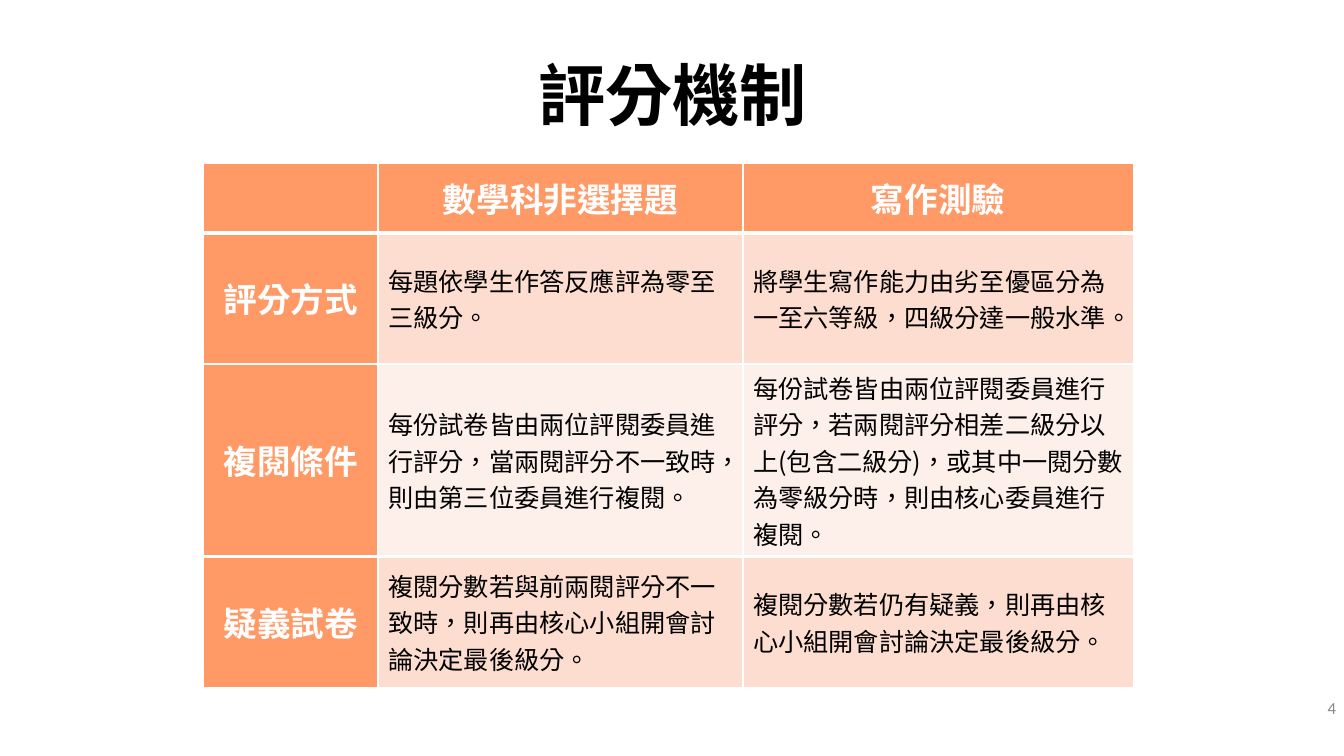
from lxml import etree
from pptx import Presentation
from pptx.dml.color import RGBColor
from pptx.enum.text import MSO_ANCHOR, PP_ALIGN
from pptx.oxml.ns import qn
from pptx.util import Inches, Pt

WHITE = RGBColor(0xFF, 0xFF, 0xFF)
BLACK = RGBColor(0, 0, 0)
GRAY = RGBColor(0x89, 0x89, 0x89)
ORANGE = RGBColor(0xFF, 0x99, 0x66)
PEACH = RGBColor(0xFC, 0xDD, 0xCF)
PALE = RGBColor(0xFD, 0xEF, 0xE9)
LEFT, CENTER, RIGHT = PP_ALIGN.LEFT, PP_ALIGN.CENTER, PP_ALIGN.RIGHT
MIDDLE = MSO_ANCHOR.MIDDLE
CJK = "Noto Sans CJK SC"


def write(tf, text, size, color, align, bold=False, font=CJK):
    p = tf.paragraphs[0]
    p.alignment = align
    r = p.add_run()
    r.text = text
    r.font.size = Pt(size)
    r.font.bold = bold
    r.font.color.rgb = color
    r.font.name = font
    rPr = r.font._element
    rPr.set("lang", "zh-TW")
    etree.SubElement(rPr, qn("a:ea")).set("typeface", font)


def set_border(cell, index, side, width):
    ln = etree.Element(qn("a:" + side), w=str(Pt(width)))
    fill = etree.SubElement(ln, qn("a:solidFill"))
    etree.SubElement(fill, qn("a:srgbClr"), val=str(WHITE))
    cell._tc.get_or_add_tcPr().insert(index, ln)


prs = Presentation()
prs.slide_width = Inches(13.33)
prs.slide_height = Inches(7.5)
s = prs.slides.add_slide(prs.slide_layouts[6])

# Title and slide number
for box, text, size, color, align, bold, font in [
    ((0.67, 0.3, 12, 1.25), "評分機制", 48, BLACK, CENTER, True, CJK),
    ((10.24, 6.82, 3.11, 0.4), "4", 12, GRAY, RIGHT, False, "Calibri"),
]:
    tf = s.shapes.add_textbox(*map(Inches, box)).text_frame
    tf.word_wrap = True
    tf.vertical_anchor = MIDDLE
    write(tf, text, size, color, align, bold, font)

# Scoring table
rows = [
    ("", "數學科非選擇題", "寫作測驗"),
    ("評分方式", "每題依學生作答反應評為零至三級分。",
     "將學生寫作能力由劣至優區分為一至六等級，四級分達一般水準。"),
    ("複閱條件",
     "每份試卷皆由兩位評閱委員進行評分，當兩閱評分不一致時，則由第三位委員進行複閱。",
     "每份試卷皆由兩位評閱委員進行評分，若兩閱評分相差二級分以上(包含二級分)，"
     "或其中一閱分數為零級分時，則由核心委員進行複閱。"),
    ("疑義試卷",
     "複閱分數若與前兩閱評分不一致時，則再由核心小組開會討論決定最後級分。",
     "複閱分數若仍有疑義，則再由核心小組開會討論決定最後級分。"),
]
col_widths = [1.73, 3.62, 3.87]
row_heights = [0.69, 1.3, 1.91, 1.3]
table = s.shapes.add_table(len(rows), len(col_widths), Inches(2.02), Inches(1.62),
                           Inches(sum(col_widths)), Inches(sum(row_heights))).table
for col, width in zip(table.columns, col_widths):
    col.width = Inches(width)
for row, height in zip(table.rows, row_heights):
    row.height = Inches(height)

# Grid line widths, outer edges first and last
x_lines = [1, 2.25, 2.25, 1]
y_lines = [1, 3, 2.25, 2.25, 1]
for i, row in enumerate(rows):
    for j, text in enumerate(row):
        cell = table.cell(i, j)
        cell.vertical_anchor = MIDDLE
        header = i == 0 or j == 0
        cell.fill.solid()
        cell.fill.fore_color.rgb = ORANGE if header else PEACH if i % 2 else PALE
        borders = [("lnL", x_lines[j]), ("lnR", x_lines[j + 1]),
                   ("lnT", y_lines[i]), ("lnB", y_lines[i + 1])]
        for index, (side, width) in enumerate(borders):
            set_border(cell, index, side, width)
        if text and header:
            write(cell.text_frame, text, 24, WHITE, CENTER, True)
        elif text:
            write(cell.text_frame, text, 18, BLACK, LEFT)

prs.save("out.pptx")
